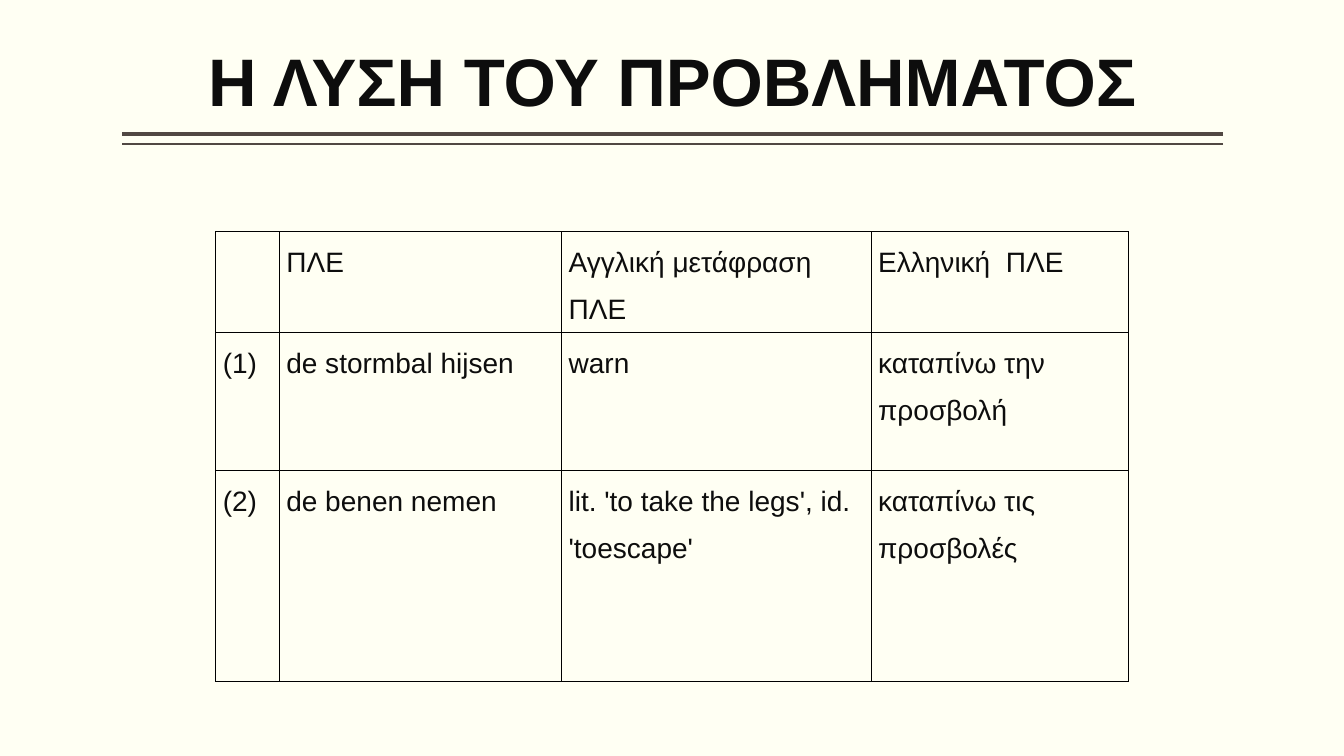
from dataclasses import dataclass

from lxml.etree import SubElement
from pptx import Presentation
from pptx.dml.color import RGBColor
from pptx.enum.shapes import MSO_CONNECTOR
from pptx.enum.text import MSO_ANCHOR, PP_ALIGN
from pptx.oxml.ns import qn
from pptx.util import Inches, Pt


@dataclass(frozen=True)
class Theme:
    background: RGBColor = RGBColor(0xFF, 0xFF, 0xF3)
    text: RGBColor = RGBColor(0x0D, 0x0D, 0x0D)
    rule: RGBColor = RGBColor(0x51, 0x48, 0x43)
    border: str = "000000"
    font: str = "Arial"
    title_size: Pt = Pt(48)
    table_size: Pt = Pt(20)


THEME = Theme()
LEFT, WIDTH = 1.21, 10.92
COLUMN_WIDTHS = [0.63, 2.8, 3.07, 2.55]
ROW_HEIGHTS = [0.93, 1.37, 2.09]
IDIOMS = [
    ["", "ΠΛΕ", "Αγγλική μετάφραση ΠΛΕ", "Ελληνική  ΠΛΕ"],
    ["(1)", "de stormbal hijsen", "warn", "καταπίνω την προσβολή"],
    ["(2)", "de benen nemen", "lit. 'to take the legs', id. 'toescape'", "καταπίνω τις προσβολές"],
]


def style_paragraph(paragraph, size, line_spacing, bold=False):
    paragraph.line_spacing = line_spacing
    paragraph.font.size = size
    for run in paragraph.runs:
        run.font.name = THEME.font
        run.font.size = size
        run.font.bold = bold
        run.font.color.rgb = THEME.text


def add_title(slide, text):
    shape = slide.shapes.add_textbox(Inches(LEFT), Inches(0.18), Inches(WIDTH), Inches(1.07))
    text_frame = shape.text_frame
    text_frame.word_wrap = True
    text_frame.vertical_anchor = MSO_ANCHOR.BOTTOM
    text_frame.margin_left = text_frame.margin_right = 0
    text_frame.text = text
    paragraph = text_frame.paragraphs[0]
    paragraph.alignment = PP_ALIGN.CENTER
    style_paragraph(paragraph, THEME.title_size, 0.9, bold=True)


def add_rule(slide, top, weight):
    connector = slide.shapes.add_connector(
        MSO_CONNECTOR.STRAIGHT, Inches(LEFT + WIDTH), Inches(top), Inches(LEFT), Inches(top)
    )
    connector.line.color.rgb = THEME.rule
    connector.line.width = Pt(weight)
    SubElement(connector._element.spPr, qn("a:effectLst"))


def add_borders(cell):
    properties = cell._tc.get_or_add_tcPr()
    for side in ("a:lnL", "a:lnR", "a:lnT", "a:lnB"):
        line = SubElement(properties, qn(side), w=str(Pt(1)))
        fill = SubElement(line, qn("a:solidFill"))
        SubElement(fill, qn("a:srgbClr"), val=THEME.border)


def fill_cell(cell, text):
    add_borders(cell)
    cell.fill.background()
    cell.margin_left = cell.margin_right = Inches(0.07)
    cell.margin_top = cell.margin_bottom = 0
    cell.text_frame.text = text
    style_paragraph(cell.text_frame.paragraphs[0], THEME.table_size, 1.5)


def add_idiom_table(slide):
    table = slide.shapes.add_table(
        len(ROW_HEIGHTS), len(COLUMN_WIDTHS), Inches(2.14), Inches(2.3),
        Inches(sum(COLUMN_WIDTHS)), Inches(sum(ROW_HEIGHTS)),
    ).table
    table.first_row = False
    table.horz_banding = False
    for column, width in zip(table.columns, COLUMN_WIDTHS):
        column.width = Inches(width)
    for row, height, texts in zip(table.rows, ROW_HEIGHTS, IDIOMS):
        row.height = Inches(height)
        for cell, text in zip(row.cells, texts):
            fill_cell(cell, text)


def main():
    presentation = Presentation()
    presentation.slide_width = Inches(13.33)
    presentation.slide_height = Inches(7.5)
    slide = presentation.slides.add_slide(presentation.slide_layouts[6])
    slide.background.fill.solid()
    slide.background.fill.fore_color.rgb = THEME.background
    add_rule(slide, 1.33, 3)
    add_rule(slide, 1.43, 1)
    add_title(slide, "Η ΛΥΣΗ ΤΟΥ ΠΡΟΒΛΗΜΑΤΟΣ")
    add_idiom_table(slide)
    presentation.save("out.pptx")


if __name__ == "__main__":
    main()
